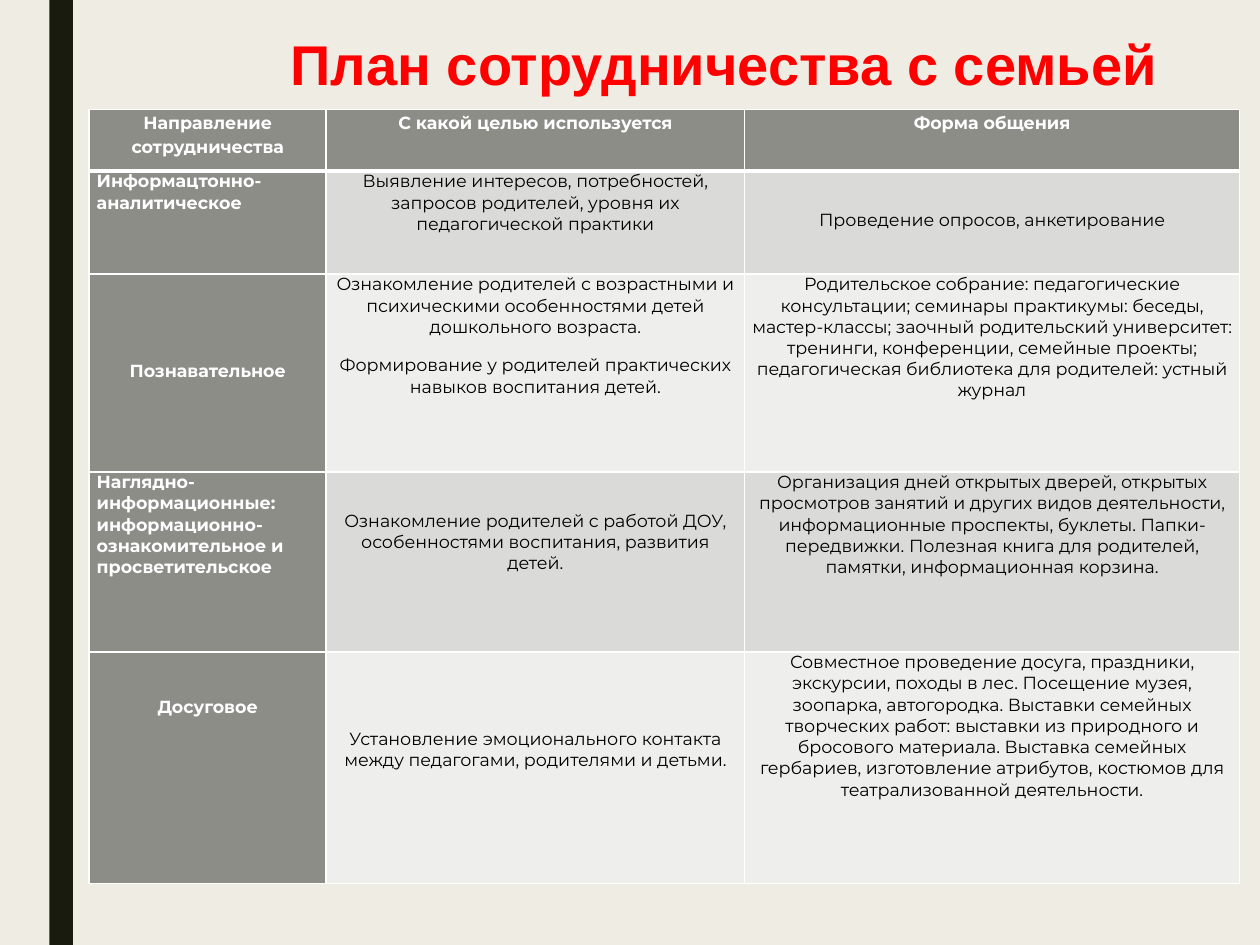
from dataclasses import dataclass

import pptx
import pptx.dml.color
import pptx.enum.shapes
import pptx.enum.text
import pptx.oxml
import pptx.oxml.ns
import pptx.util

Pt = pptx.util.Pt
ALIGN = pptx.enum.text.PP_ALIGN


@dataclass(frozen=True)
class Theme:
    background: str = "EFEDE3"
    stripe: str = "191B0E"
    heading: str = "8C8D86"
    bands: tuple[str, str] = ("DADBD9", "EEEEED")
    white: str = "FFFFFF"
    text: str = "000000"
    title: str = "FF0000"
    title_font: str = "Arial"
    body_font: str = "Montserrat"
    title_size: float = 32
    body_size: float = 10


@dataclass(frozen=True)
class Entry:
    paragraphs: tuple[str, ...]
    drop: float = 0
    align: ALIGN = ALIGN.CENTER
    spacing: float = 1.0


@dataclass(frozen=True)
class Row:
    height: float
    entries: tuple[Entry, Entry, Entry]


THEME = Theme()
COLUMN_WIDTHS = (135.36, 239.04, 282.96)
ROWS = (
    Row(35.28, (
        Entry(("Направление сотрудничества",), spacing=1.15),
        Entry(("С какой целью используется",), spacing=1.15),
        Entry(("Форма общения",), spacing=1.15),
    )),
    Row(58.8, (
        Entry(("Информацтонно-аналитическое",), align=ALIGN.LEFT),
        Entry(("Выявление интересов, потребностей, запросов родителей, "
               "уровня их педагогической практики",)),
        Entry(("Проведение опросов, анкетирование",), drop=22),
    )),
    Row(113.04, (
        Entry(("Познавательное",), drop=48, spacing=1.15),
        Entry(("Ознакомление родителей с возрастными и психическими "
               "особенностями детей дошкольного возраста.",
               "Формирование у родителей практических навыков воспитания детей.")),
        Entry(("Родительское собрание: педагогические консультации; семинары "
               "практикумы: беседы, мастер-классы; заочный родительский "
               "университет: тренинги, конференции, семейные проекты; "
               "педагогическая библиотека для родителей: устный журнал",)),
    )),
    Row(102.96, (
        Entry(("Наглядно-информационные: информационно-ознакомительное "
               "и просветительское",), align=ALIGN.LEFT),
        Entry(("Ознакомление родителей с работой ДОУ, особенностями "
               "воспитания, развития детей.",), drop=22),
        Entry(("Организация дней открытых дверей, открытых просмотров занятий "
               "и других видов деятельности, информационные проспекты, буклеты. "
               "Папки-передвижки. Полезная книга для родителей, памятки, "
               "информационная корзина.",)),
    )),
    Row(132.48, (
        Entry(("Досуговое",), drop=24, spacing=1.15),
        Entry(("Установление эмоционального контакта между педагогами, "
               "родителями и детьми.",), drop=44),
        Entry(("Совместное проведение досуга, праздники, экскурсии, походы в "
               "лес. Посещение музея, зоопарка, автогородка. Выставки семейных "
               "творческих работ: выставки из природного и бросового материала. "
               "Выставка семейных гербариев, изготовление атрибутов, костюмов "
               "для театрализованной деятельности.",)),
    )),
)


def rgb(value: str) -> pptx.dml.color.RGBColor:
    return pptx.dml.color.RGBColor.from_string(value)


def write(tf, *paragraphs: str, size: float, font: str, color: str,
          bold: bool = False, align: ALIGN = ALIGN.LEFT,
          spacing: float = 1.0, after: float = 0) -> None:
    tf.word_wrap = True
    for i, text in enumerate(paragraphs):
        p = tf.add_paragraph() if i else tf.paragraphs[0]
        p.alignment = align
        p.line_spacing = spacing
        p.space_after = Pt(after)
        r = p.add_run()
        r.text = text
        r.font.size = Pt(size)
        r.font.name = font
        r.font.bold = bold
        r.font.color.rgb = rgb(color)


def set_borders(cell, top: float, bottom: float) -> None:
    tc_pr = cell._tc.get_or_add_tcPr()
    widths = {"lnL": 1, "lnR": 1, "lnT": top, "lnB": bottom}
    for i, (tag, width) in enumerate(widths.items()):
        tc_pr.insert(i, pptx.oxml.parse_xml(
            f'<a:{tag} {pptx.oxml.ns.nsdecls("a")} w="{Pt(width)}">'
            f'<a:solidFill><a:srgbClr val="{THEME.white}"/></a:solidFill></a:{tag}>'))


def draw_stripe(s) -> None:
    sp = s.shapes.add_shape(pptx.enum.shapes.MSO_SHAPE.RECTANGLE,
                            Pt(28.2), Pt(0), Pt(13.5), Pt(540))
    sp.shadow.inherit = False
    sp.fill.solid()
    sp.fill.fore_color.rgb = rgb(THEME.stripe)
    sp.line.fill.background()


def draw_title(s) -> None:
    sp = s.shapes.add_textbox(Pt(159), Pt(5.8), Pt(561), Pt(90))
    tf = sp.text_frame
    tf.margin_top = Pt(11)
    write(tf, "План сотрудничества с семьей", size=THEME.title_size,
          font=THEME.title_font, color=THEME.title, bold=True)


def draw_entry(cell, entry: Entry, row: int, column: int) -> None:
    is_heading = row == 0 or column == 0
    cell.margin_left = cell.margin_right = Pt(4.3)
    cell.margin_top = Pt(entry.drop)
    cell.margin_bottom = Pt(0)
    cell.vertical_anchor = pptx.enum.text.MSO_ANCHOR.TOP
    cell.fill.solid()
    cell.fill.fore_color.rgb = rgb(
        THEME.heading if is_heading else THEME.bands[(row - 1) % 2])
    set_borders(cell, top=3 if row == 1 else 1, bottom=3 if row == 0 else 1)
    write(cell.text_frame, *entry.paragraphs, size=THEME.body_size,
          font=THEME.body_font, color=THEME.white if is_heading else THEME.text,
          bold=is_heading, align=entry.align, spacing=entry.spacing, after=10)


def draw_plan(s) -> None:
    table = s.shapes.add_table(
        len(ROWS), len(COLUMN_WIDTHS), Pt(51), Pt(62.5),
        Pt(sum(COLUMN_WIDTHS)), Pt(sum(row.height for row in ROWS))).table
    for column, width in zip(table.columns, COLUMN_WIDTHS):
        column.width = Pt(width)
    for i, row in enumerate(ROWS):
        table.rows[i].height = Pt(row.height)
        for j, entry in enumerate(row.entries):
            draw_entry(table.cell(i, j), entry, i, j)


def main() -> None:
    prs = pptx.Presentation()
    prs.slide_width, prs.slide_height = Pt(720), Pt(540)
    s = prs.slides.add_slide(prs.slide_layouts[6])
    s.background.fill.solid()
    s.background.fill.fore_color.rgb = rgb(THEME.background)
    draw_stripe(s)
    draw_plan(s)
    draw_title(s)
    prs.save("out.pptx")


if __name__ == "__main__":
    main()
